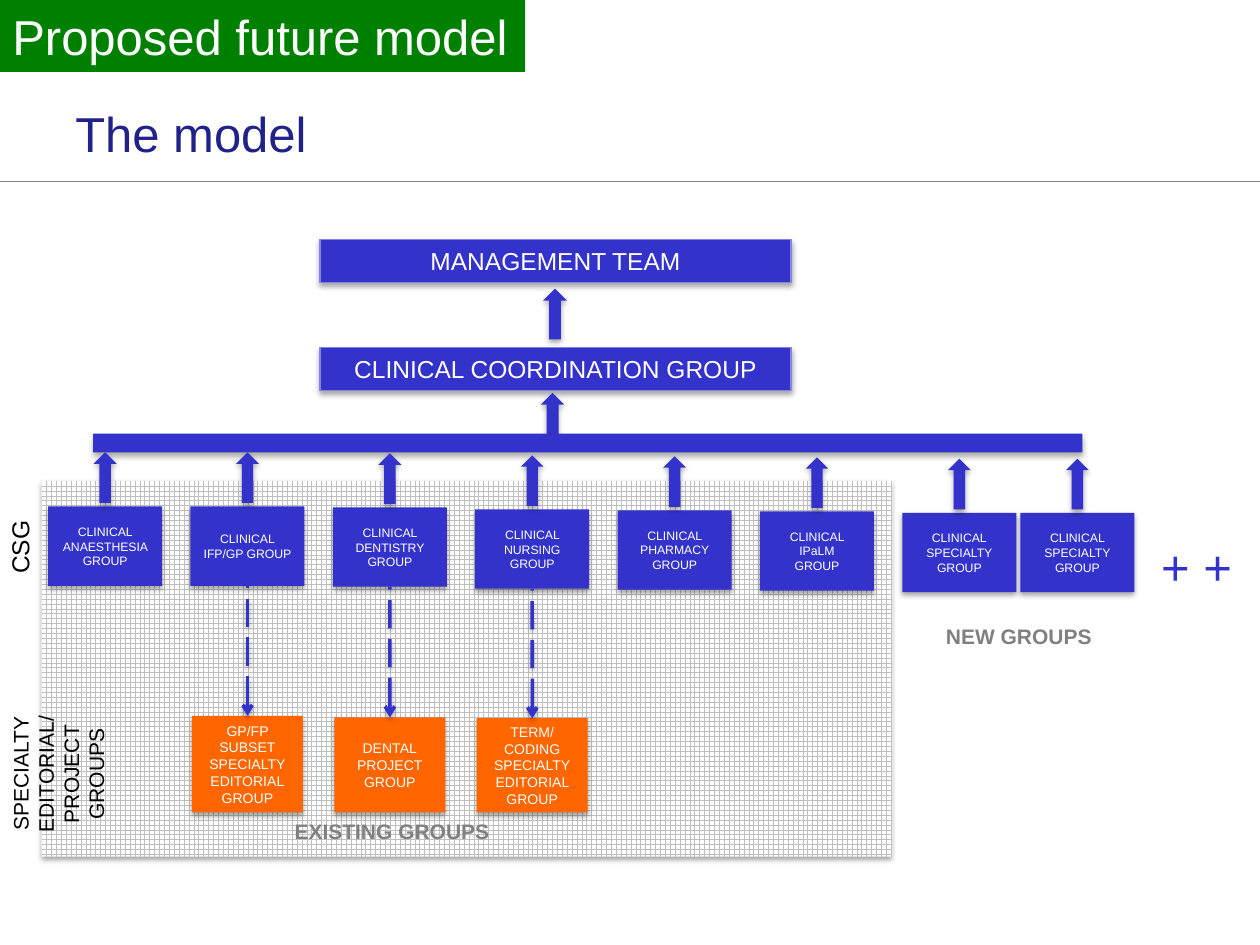
from lxml import etree
from pptx import Presentation
from pptx.dml.color import RGBColor
from pptx.enum.dml import MSO_LINE, MSO_PATTERN
from pptx.enum.shapes import MSO_CONNECTOR, MSO_SHAPE
from pptx.enum.text import MSO_ANCHOR, PP_ALIGN
from pptx.oxml.ns import qn
from pptx.util import Cm, Pt

RECT, UP_ARROW = MSO_SHAPE.RECTANGLE, MSO_SHAPE.UP_ARROW
STRAIGHT = MSO_CONNECTOR.STRAIGHT
LONG_DASH, LARGE_GRID = MSO_LINE.LONG_DASH, MSO_PATTERN.LARGE_GRID
LEFT, CENTER = PP_ALIGN.LEFT, PP_ALIGN.CENTER
TOP, MIDDLE = MSO_ANCHOR.TOP, MSO_ANCHOR.MIDDLE

COLORS = {
    "blue": "3333CC", "edge": "8585E0", "navy": "21218A", "green": "008000",
    "orange": "FF6600", "gray": "808080", "grid": "BFBFBF",
    "white": "FFFFFF", "black": "000000",
}
PITCH, GROUP_W, GROUP_H = 2.87, 2.3, 1.6
ARROW_W, ARROW_H = 0.46, 1.02

CLINICAL_GROUPS = [
    (0, 0, "CLINICAL ANAESTHESIA GROUP"),
    (PITCH, 0, "CLINICAL\nIFP/GP GROUP"),
    (2 * PITCH, 0.02, "CLINICAL DENTISTRY GROUP"),
    (3 * PITCH, 0.06, "CLINICAL NURSING GROUP"),
    (4 * PITCH, 0.08, "CLINICAL PHARMACY GROUP"),
    (5 * PITCH, 0.1, "CLINICAL IPaLM\nGROUP"),
    (6 * PITCH, 0.13, "CLINICAL\nSPECIALTY\nGROUP"),
    (19.6, 0.13, "CLINICAL\nSPECIALTY\nGROUP"),
]
PROJECT_GROUPS = [
    (0, "GP/FP SUBSET\nSPECIALTY\nEDITORIAL\nGROUP"),
    (0.03, "DENTAL\nPROJECT\nGROUP"),
    (0.05, "TERM/CODING\nSPECIALTY\nEDITORIAL GROUP"),
]


def rgb(name):
    """Return the named colour."""
    return RGBColor.from_string(COLORS[name])


def add_shadow(effects):
    """Put a soft downward shadow into an effect list."""
    shadow = etree.SubElement(effects, qn("a:outerShdw"), blurRad="40000",
                              dist="23000", dir="5400000", rotWithShape="0")
    color = etree.SubElement(shadow, qn("a:srgbClr"), val=COLORS["black"])
    etree.SubElement(color, qn("a:alpha"), val="35000")


def set_text(sp, text, size=14, color="white", bold=False, align=CENTER,
             anchor=MIDDLE, wrap=True):
    """Write one paragraph per line of text in the given format."""
    tf = sp.text_frame
    tf.word_wrap = wrap
    tf.vertical_anchor = anchor
    for i, line in enumerate(text.split("\n")):
        p = tf.paragraphs[0] if i == 0 else tf.add_paragraph()
        p.alignment = align
        r = p.add_run()
        r.text = line
        r.font.name, r.font.size, r.font.bold = "Arial", Pt(size), bold
        r.font.color.rgb = rgb(color)


def add_label(s, x, y, w, h, text, rotation=0, **fmt):
    """Add a text box, left and top aligned unless told otherwise."""
    sp = s.shapes.add_textbox(Cm(x), Cm(y), Cm(w), Cm(h))
    sp.rotation = rotation
    set_text(sp, text, **{"align": LEFT, "anchor": TOP, "wrap": False, **fmt})


def add_block(s, x, y, w, h, kind=RECT, fill="blue", edge=None, shadow=True):
    """Add a filled preset shape."""
    sp = s.shapes.add_shape(kind, Cm(x), Cm(y), Cm(w), Cm(h))
    sp.fill.solid()
    sp.fill.fore_color.rgb = rgb(fill)
    if edge:
        sp.line.color.rgb = rgb(edge)
        sp.line.width = Pt(0.75)
    else:
        sp.line.fill.background()
    sp.shadow.inherit = False
    if shadow:
        add_shadow(sp._element.spPr.find(qn("a:effectLst")))
    return sp


def add_line(s, x1, y1, x2, y2, color, width):
    """Add a straight connector and return it with its effect list."""
    line = s.shapes.add_connector(STRAIGHT, Cm(x1), Cm(y1), Cm(x2), Cm(y2))
    line.line.color.rgb = rgb(color)
    line.line.width = Pt(width)
    return line, etree.SubElement(line._element.spPr, qn("a:effectLst"))


def add_dashed_arrow(s, project, clinical):
    """Join a clinical group to its project group, pointing at the latter."""
    arrow, effects = add_line(s, 0, 0, 0, 0, "blue", 2)
    arrow.begin_connect(project, 0)
    arrow.end_connect(clinical, 2)
    arrow.line.dash_style = LONG_DASH
    ln = arrow._element.spPr.find(qn("a:ln"))
    etree.SubElement(ln, qn("a:headEnd"), type="arrow")
    add_shadow(effects)


def add_header(s, x, y, w):
    """Place the banner, the title and the rule below them."""
    add_line(s, x, y + 3.66, x + w, y + 3.66, "gray", 0.75)
    banner = add_block(s, x, y, 10.59, 1.45, fill="green", shadow=False)
    set_text(banner, "Proposed future model", size=28, align=LEFT,
             anchor=TOP, wrap=False)
    add_label(s, x + 1.27, y + 1.98, 18.31, 1.42, "The model", size=28,
              color="navy", anchor=MIDDLE, wrap=True)


def add_existing_panel(s, x, y, w, h):
    """Place the grid panel with its caption and row names."""
    panel = add_block(s, x, y, w, h)
    panel.fill.patterned()
    panel.fill.pattern = LARGE_GRID
    panel.fill.fore_color.rgb = rgb("grid")
    panel.fill.back_color.rgb = rgb("white")
    add_label(s, x + 4.85, y + 6.68, 4.47, 0.76, "EXISTING GROUPS", size=12,
              color="gray", bold=True)
    add_label(s, x - 1.25, y + 0.87, 1.63, 0.86, "CSG", rotation=270,
              color="black")
    add_label(s, x - 2.03, y + 4.75, 4.75, 2.31,
              "SPECIALTY EDITORIAL/\nPROJECT\nGROUPS", rotation=270, size=12,
              color="black", align=CENTER, wrap=True)


def add_management(s, x, y, w):
    """Place the two upper levels, their arrows and the collecting bar."""
    levels = ["MANAGEMENT TEAM", "CLINICAL COORDINATION GROUP"]
    for i, name in enumerate(levels):
        sp = add_block(s, x, y + i * 2.18, w, 0.86, edge="edge")
        set_text(sp, name)
    for dx, dy in [(4.5, 0.99), (4.45, 3.09)]:
        add_block(s, x + dx, y + dy, 0.48, ARROW_H, UP_ARROW)
    add_block(s, x - 4.57, y + 3.91, 19.94, 0.38)


def add_clinical_groups(s, x, y):
    """Place the row of clinical groups with arrows up and return the boxes."""
    boxes = []
    for dx, dy, name in CLINICAL_GROUPS:
        left, top = x + dx, y + dy
        sp = add_block(s, left, top, GROUP_W, GROUP_H)
        set_text(sp, name, size=7)
        add_block(s, left + (GROUP_W - ARROW_W) / 2, top - 1.09,
                  ARROW_W, ARROW_H, UP_ARROW)
        boxes.append(sp)
    add_label(s, x + 17.85, y + 2.24, 3.48, 0.76, "NEW GROUPS", size=12,
              color="gray", bold=True)
    add_label(s, x + 22.19, y + 0.48, 1.96, 1.45, "+ +", size=28, color="blue")
    return boxes


def add_project_groups(s, x, y, h, parents):
    """Place the project groups under their parents, on a common base."""
    w = 2.24
    for i, ((dy, name), parent) in enumerate(zip(PROJECT_GROUPS, parents)):
        left = x + i * PITCH + (GROUP_W - w) / 2
        sp = add_block(s, left, y + dy, w, h - dy, fill="orange")
        set_text(sp, name, size=8)
        add_dashed_arrow(s, sp, parent)


def main():
    """Build the slide and save it."""
    prs = Presentation()
    prs.slide_width, prs.slide_height = Cm(25.4), Cm(19.05)
    s = prs.slides.add_slide(prs.slide_layouts[6])
    add_header(s, 0, 0, 25.4)
    add_existing_panel(s, 0.84, 9.7, 17.15, 7.57)
    add_management(s, 6.45, 4.83, 9.5)
    boxes = add_clinical_groups(s, 0.97, 10.21)
    add_project_groups(s, 0.97 + PITCH, 14.43, 1.95, boxes[1:4])
    prs.save("out.pptx")


if __name__ == "__main__":
    main()
